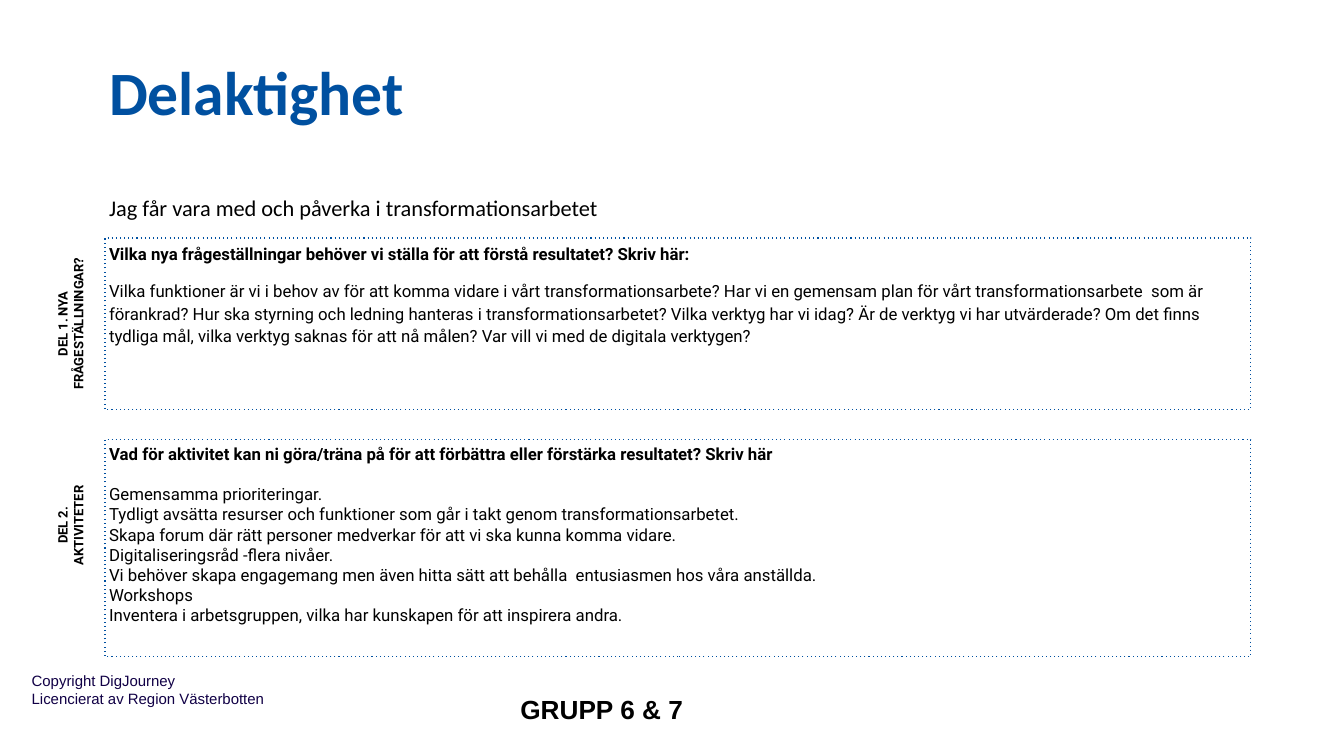
from dataclasses import dataclass

from lxml import etree
from pptx import Presentation
from pptx import util as u
from pptx.dml.color import RGBColor
from pptx.enum import text as t
from pptx.oxml import ns

Pt = u.Pt
BLUE = RGBColor(0x00, 0x50, 0xA0)
NAVY = RGBColor(0x11, 0x00, 0x46)
BLACK = RGBColor(0, 0, 0)
LEFT, CENTER = t.PP_ALIGN.LEFT, t.PP_ALIGN.CENTER
TOP, BOTTOM = t.MSO_ANCHOR.TOP, t.MSO_ANCHOR.BOTTOM
EDGE = 75  # shared left edge of title, lead and panels


@dataclass
class Panel:
    slot: int
    top: float
    height: float
    head: str
    lines: list[str]
    gap: float
    lead: float


@dataclass
class Label:
    top: float
    lines: list[str]


PANELS = [
    Panel(2, 170, 122.5,
          "Vilka nya frågeställningar behöver vi ställa för att förstå resultatet? Skriv här:",
          ["Vilka funktioner är vi i behov av för att komma vidare i vårt transformationsarbete? "
           "Har vi en gemensam plan för vårt transformationsarbete  som är förankrad? "
           "Hur ska styrning och ledning hanteras i transformationsarbetet? "
           "Vilka verktyg har vi idag? Är de verktyg vi har utvärderade? "
           "Om det finns tydliga mål, vilka verktyg saknas för att nå målen? "
           "Var vill vi med de digitala verktygen?"],
          10.7, 1.1),
    Panel(4, 314, 155,
          "Vad för aktivitet kan ni göra/träna på för att förbättra eller förstärka resultatet? Skriv här",
          ["Gemensamma prioriteringar.",
           "Tydligt avsätta resurser och funktioner som går i takt genom transformationsarbetet.",
           "Skapa forum där rätt personer medverkar för att vi ska kunna komma vidare.",
           "Digitaliseringsråd -flera nivåer.",
           "Vi behöver skapa engagemang men även hitta sätt att behålla  entusiasmen hos våra anställda.",
           "Workshops",
           "Inventera i arbetsgruppen, vilka har kunskapen för att inspirera andra."],
          14.4, 1.0),
]
LABELS = [
    Label(210.5, ["DEL 1. NYA FRÅGESTÄLLNINGAR?"]),
    Label(354.5, ["DEL 2.", "AKTIVITETER"]),
]


def place(shape, left: float, top: float, width: float, height: float) -> None:
    shape.left, shape.top = Pt(left), Pt(top)
    shape.width, shape.height = Pt(width), Pt(height)


def frame(shape, inset: float, anchor=TOP):
    box = shape.text_frame
    box.word_wrap = True
    box.auto_size = t.MSO_AUTO_SIZE.NONE
    box.vertical_anchor = anchor
    box.margin_left = box.margin_right = Pt(inset)
    box.margin_top = box.margin_bottom = Pt(inset)
    return box


def write(box, text: str, *, size: float, font: str, color=BLACK, bold=False,
          align=LEFT, before: float = 0, after: float = 0, lead: float = 1.0) -> None:
    """Add one paragraph, filling the empty first one if there is one."""
    para = box.paragraphs[0] if not box.text else box.add_paragraph()
    props = para._p.get_or_add_pPr()
    props.set("marL", "0")
    props.set("indent", "0")
    etree.SubElement(props, ns.qn("a:buNone"))
    para.alignment, para.line_spacing = align, lead
    para.space_before, para.space_after = Pt(before), Pt(after)
    run = para.add_run()
    run.text = text
    run.font.size, run.font.name, run.font.bold = Pt(size), font, bold
    run.font.color.rgb = color


def dot(shape) -> None:
    """Give the shape a thin blue dotted outline."""
    shape.line.color.rgb = BLUE
    shape.line.width = Pt(0.75)
    line = shape._element.spPr.find(ns.qn("a:ln"))
    etree.SubElement(line, ns.qn("a:prstDash")).set("val", "dot")


def draw_panel(slide, panel: Panel) -> None:
    shape = slide.placeholders[panel.slot]
    place(shape, EDGE, panel.top, 818.5, panel.height)
    dot(shape)
    box = frame(shape, 2.9)
    write(box, panel.head, size=12, font="Roboto", bold=True, lead=panel.lead)
    for i, line in enumerate(panel.lines):
        write(box, line, size=12, font="Roboto", lead=panel.lead,
              before=0 if i else panel.gap)


def add_box(slide, left: float, top: float, width: float, height: float,
            lines: list[str], **style):
    shape = slide.shapes.add_textbox(Pt(left), Pt(top), Pt(width), Pt(height))
    box = frame(shape, 9.6)
    for line in lines:
        write(box, line, **style)
    return shape


def main() -> None:
    deck = Presentation()
    deck.slide_width, deck.slide_height = Pt(960), Pt(540)
    slide = deck.slides.add_slide(deck.slide_layouts[4])
    spare = slide.placeholders[3]._element
    spare.getparent().remove(spare)

    # Title and lead
    title = slide.shapes.title
    place(title, EDGE, -3.5, 714, 98)
    write(frame(title, 2.9, BOTTOM), "Delaktighet",
          size=44, font="Calibri", color=BLUE, bold=True)
    lead = slide.placeholders[1]
    place(lead, EDGE, 103.5, 569, 57)
    write(frame(lead, 2.9, BOTTOM), "Jag får vara med och påverka i transformationsarbetet",
          size=16, font="Calibri", after=5.3)

    # Panels with their upright labels
    for panel in PANELS:
        draw_panel(slide, panel)
    for label in LABELS:
        shape = add_box(slide, -11, label.top, 122.5, 41.5, label.lines,
                        size=9.3, font="Roboto", bold=True, align=CENTER)
        shape.rotation = 270

    # Foot of the slide
    add_box(slide, 13, 470, 314.5, 45.5,
            ["Copyright DigJourney", "Licencierat av Region Västerbotten"],
            size=10.7, font="Arial", color=NAVY)
    add_box(slide, 359.5, 485.5, 140.5, 41.5, ["GRUPP 6 & 7"],
            size=18.7, font="Arial", bold=True, align=CENTER)

    deck.save("out.pptx")


if __name__ == "__main__":
    main()
